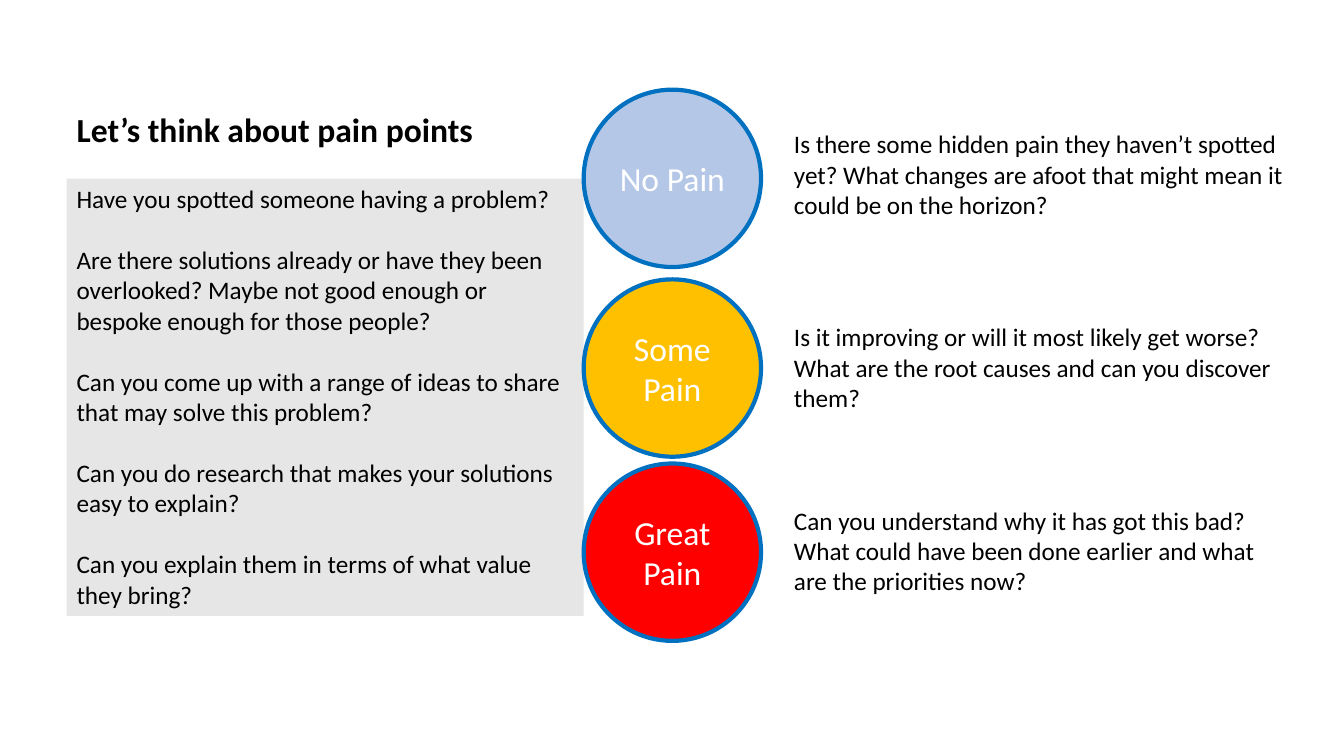
from pptx import Presentation
from pptx.dml.color import RGBColor
from pptx.enum.shapes import MSO_SHAPE
from pptx.enum.text import MSO_ANCHOR, PP_ALIGN
from pptx.util import Cm, Pt

RECTANGLE, OVAL = MSO_SHAPE.RECTANGLE, MSO_SHAPE.OVAL
TOP, MIDDLE = MSO_ANCHOR.TOP, MSO_ANCHOR.MIDDLE
LEFT, CENTER = PP_ALIGN.LEFT, PP_ALIGN.CENTER

BLACK = RGBColor(0x00, 0x00, 0x00)
WHITE = RGBColor(0xFF, 0xFF, 0xFF)
GREY = RGBColor(0xE7, 0xE6, 0xE6)
PALE_BLUE = RGBColor(0xB4, 0xC7, 0xE7)
AMBER = RGBColor(0xFF, 0xC0, 0x00)
RED = RGBColor(0xFF, 0x00, 0x00)
OUTLINE_BLUE = RGBColor(0x00, 0x70, 0xC0)

FONT = "Calibri"
TITLE = "Let’s think about pain points"
QUESTIONS = [
    "Have you spotted someone having a problem?",
    "Are there solutions already or have they been overlooked? "
    "Maybe not good enough or bespoke enough for those people?",
    "Can you come up with a range of ideas to share that may solve this problem?",
    "Can you do research that makes your solutions easy to explain?",
    "Can you explain them in terms of what value they bring?",
]
PAIN_LEVELS = [
    ("No Pain", PALE_BLUE, 2.26, 3.12,
     "Is there some hidden pain they haven’t spotted yet? "
     "What changes are afoot that might mean it could be on the horizon?"),
    ("Some Pain", AMBER, 7.04, 7.98,
     "Is it improving or will it most likely get worse? "
     "What are the root causes and can you discover them?"),
    ("Great Pain", RED, 11.68, 12.6,
     "Can you understand why it has got this bad? "
     "What could have been done earlier and what are the priorities now?"),
]
COLUMN_WIDTH = 13.03
CIRCLE_SIZE = 4.47
PROMPT_OFFSET = 5.05
PROMPT_HEIGHT = 2.57


def write_text(shape, *texts, size=18, color=BLACK, bold=False,
               align=LEFT, anchor=TOP, gap=0):
    frame = shape.text_frame
    frame.word_wrap = True
    frame.vertical_anchor = anchor
    for index, text in enumerate(texts):
        paragraph = frame.add_paragraph() if index else frame.paragraphs[0]
        paragraph.alignment = align
        paragraph.line_spacing = 1.0
        paragraph.space_before = Pt(gap if index else 0)
        run = paragraph.add_run()
        run.text = text
        run.font.name = FONT
        run.font.size = Pt(size)
        run.font.bold = bold
        run.font.color.rgb = color


def add_filled_shape(slide, kind, left, top, width, height, fill):
    shape = slide.shapes.add_shape(kind, Cm(left), Cm(top), Cm(width), Cm(height))
    shape.shadow.inherit = False
    shape.fill.solid()
    shape.fill.fore_color.rgb = fill
    shape.line.fill.background()
    return shape


def place_title(slide, left, top, width, height):
    title = slide.shapes.title
    title.left, title.top = Cm(left), Cm(top)
    title.width, title.height = Cm(width), Cm(height)
    write_text(title, TITLE, size=24, bold=True)


def add_question_panel(slide, left, top, width, height):
    panel = add_filled_shape(slide, RECTANGLE, left, top, width, height, GREY)
    write_text(panel, *QUESTIONS, gap=22)


def add_pain_levels(slide, left):
    for label, fill, circle_top, prompt_top, prompt in PAIN_LEVELS:
        circle = add_filled_shape(slide, OVAL, left, circle_top,
                                  CIRCLE_SIZE, CIRCLE_SIZE, fill)
        circle.line.color.rgb = OUTLINE_BLUE
        circle.line.width = Pt(3)
        write_text(circle, label, size=24, color=WHITE, align=CENTER, anchor=MIDDLE)
        prompt_box = slide.shapes.add_textbox(
            Cm(left + PROMPT_OFFSET), Cm(prompt_top), Cm(COLUMN_WIDTH), Cm(PROMPT_HEIGHT))
        write_text(prompt_box, prompt)


def main():
    presentation = Presentation()
    presentation.slide_width = Cm(33.87)
    presentation.slide_height = Cm(19.05)
    slide = presentation.slides.add_slide(
        presentation.slide_layouts.get_by_name("Title Only"))
    margin, panel_top = 1.68, 4.5
    place_title(slide, margin, 2.62, 19.38, 1.27)
    add_question_panel(slide, margin, panel_top, COLUMN_WIDTH, 11.02)
    add_pain_levels(slide, margin + COLUMN_WIDTH)
    presentation.save("out.pptx")


if __name__ == "__main__":
    main()
